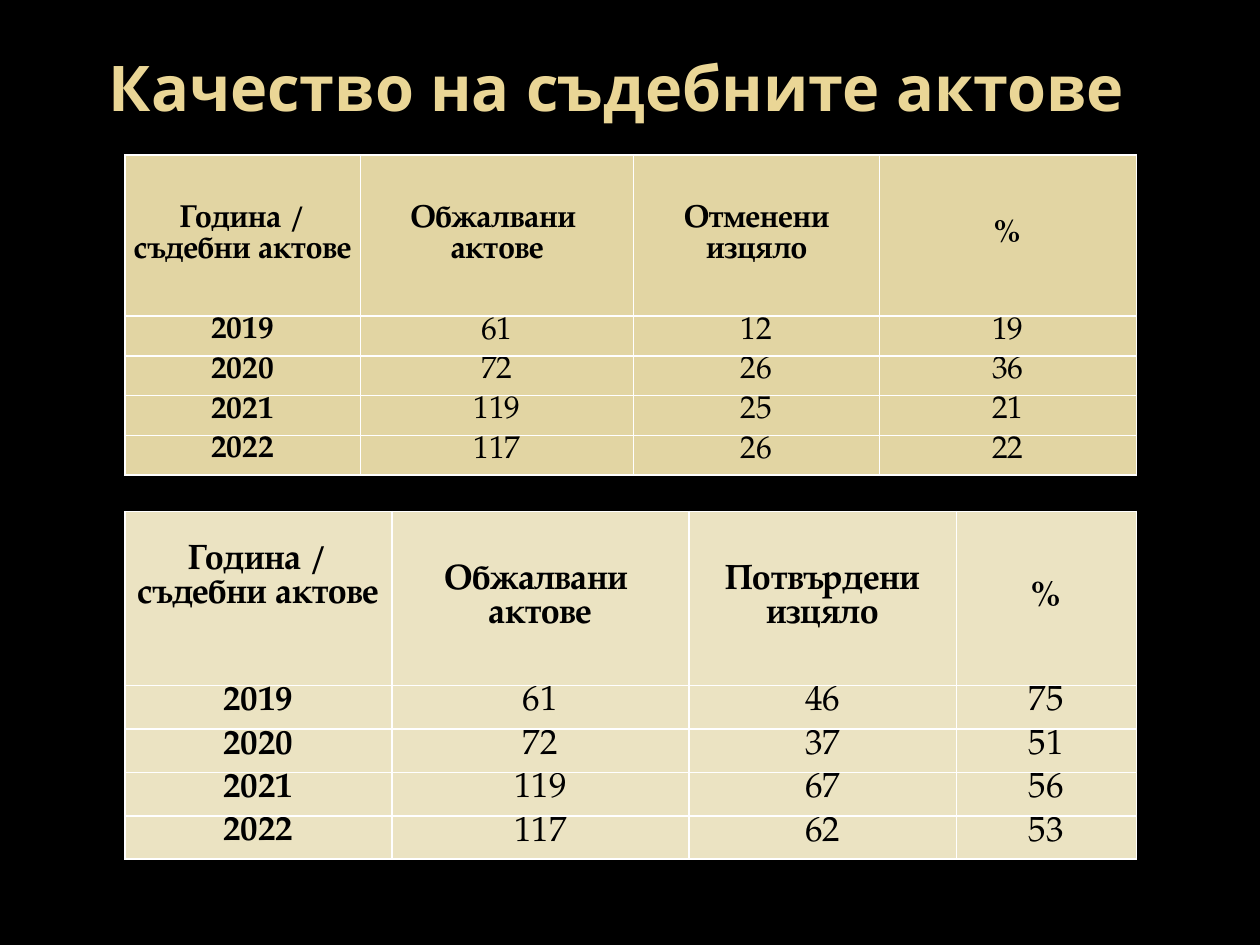
from dataclasses import dataclass

import lxml.etree
import pptx
import pptx.dml.color
import pptx.enum.text
import pptx.oxml.ns
import pptx.util

Inches = pptx.util.Inches
Pt = pptx.util.Pt


@dataclass(frozen=True)
class Theme:
    """Colours, fonts and type sizes of the slide."""

    background: str = "000000"
    title: str = "EAD696"
    ink: str = "000000"
    border: str = "FFFFFF"
    title_font: str = "Open Sans"
    table_font: str = "TeX Gyre Pagella"
    title_size: int = 36
    border_width: int = 1


@dataclass(frozen=True)
class ActsTable:
    """Content and layout of one table of court acts."""

    top: float
    height: float
    header_height: float
    columns: tuple[float, ...]
    fill: str
    size: int
    rows: tuple[tuple[str, ...], ...]
    year_header_bottom: float = 0


THEME = Theme()
TABLE_LEFT = 0.99
YEAR_HEADER = "Година / съдебни актове"
APPEALED_HEADER = "Обжалвани \nактове"

TABLES = (
    ActsTable(
        1.23, 2.54, 1.28, (1.87, 2.17, 1.95, 2.04), "E2D5A3", 18,
        (
            (YEAR_HEADER, APPEALED_HEADER, "Отменени\nизцяло", "%"),
            ("2019", "61", "12", "19"),
            ("2020", "72", "26", "36"),
            ("2021", "119", "25", "21"),
            ("2022", "117", "26", "22"),
        ),
    ),
    ActsTable(
        4.06, 2.76, 1.38, (2.12, 2.36, 2.12, 1.43), "EBE3C2", 20,
        (
            (YEAR_HEADER, APPEALED_HEADER, "Потвърдени изцяло", "%"),
            ("2019", "61", "46", "75"),
            ("2020", "72", "37", "51"),
            ("2021", "119", "67", "56"),
            ("2022", "117", "62", "53"),
        ),
        year_header_bottom=0.32,
    ),
)


def rgb(colour: str) -> pptx.dml.color.RGBColor:
    """Turn a hex string into a colour."""
    return pptx.dml.color.RGBColor.from_string(colour)


def format_text(frame, font: str, size: int, colour: str, bold: bool) -> None:
    """Centre the paragraphs and format their runs."""
    for paragraph in frame.paragraphs:
        paragraph.alignment = pptx.enum.text.PP_ALIGN.CENTER
        for run in paragraph.runs:
            run.font.name = font
            run.font.size = Pt(size)
            run.font.bold = bold
            run.font.color.rgb = rgb(colour)


def add_borders(cell) -> None:
    """Draw the four borders of a cell, ahead of its fill."""
    qn = pptx.oxml.ns.qn
    properties = cell._tc.get_or_add_tcPr()
    for position, side in enumerate(("a:lnL", "a:lnR", "a:lnT", "a:lnB")):
        line = lxml.etree.Element(qn(side), w=str(Pt(THEME.border_width)))
        fill = lxml.etree.SubElement(line, qn("a:solidFill"))
        lxml.etree.SubElement(fill, qn("a:srgbClr"), val=THEME.border)
        properties.insert(position, line)


def add_title(slide, title: str) -> None:
    """Add the slide title."""
    box = slide.shapes.add_textbox(Inches(0.44), Inches(0.3), Inches(8.91), Inches(0.77))
    frame = box.text_frame
    frame.word_wrap = True
    frame.vertical_anchor = pptx.enum.text.MSO_ANCHOR.MIDDLE
    frame.text = title
    format_text(frame, THEME.title_font, THEME.title_size, THEME.title, True)


def fill_cell(cell, text: str, acts: ActsTable, header: bool, year: bool) -> None:
    """Write and style one table cell."""
    anchor = pptx.enum.text.MSO_ANCHOR
    cell.margin_left = cell.margin_right = Inches(0.05)
    cell.margin_top = 0
    cell.margin_bottom = Inches(acts.year_header_bottom if header and year else 0)
    cell.vertical_anchor = anchor.MIDDLE if header else anchor.TOP
    cell.fill.solid()
    cell.fill.fore_color.rgb = rgb(acts.fill)
    add_borders(cell)
    cell.text_frame.text = text
    format_text(cell.text_frame, THEME.table_font, acts.size, THEME.ink, header or year)


def add_acts_table(slide, acts: ActsTable) -> None:
    """Add one table with a tall header and equal year rows."""
    table = slide.shapes.add_table(
        len(acts.rows), len(acts.columns), Inches(TABLE_LEFT), Inches(acts.top),
        Inches(sum(acts.columns)), Inches(acts.height),
    ).table
    for column, width in zip(table.columns, acts.columns):
        column.width = Inches(width)
    year_height = (acts.height - acts.header_height) / (len(acts.rows) - 1)
    for r, values in enumerate(acts.rows):
        table.rows[r].height = Inches(year_height if r else acts.header_height)
        for c, text in enumerate(values):
            fill_cell(table.cell(r, c), text, acts, header=r == 0, year=c == 0)


def main() -> None:
    """Build and save the slide."""
    presentation = pptx.Presentation()
    presentation.slide_width = Inches(10)
    presentation.slide_height = Inches(7.5)
    slide = presentation.slides.add_slide(presentation.slide_layouts[6])
    slide.background.fill.solid()
    slide.background.fill.fore_color.rgb = rgb(THEME.background)
    add_title(slide, "Качество на съдебните актове")
    for acts in TABLES:
        add_acts_table(slide, acts)
    presentation.save("out.pptx")


if __name__ == "__main__":
    main()
